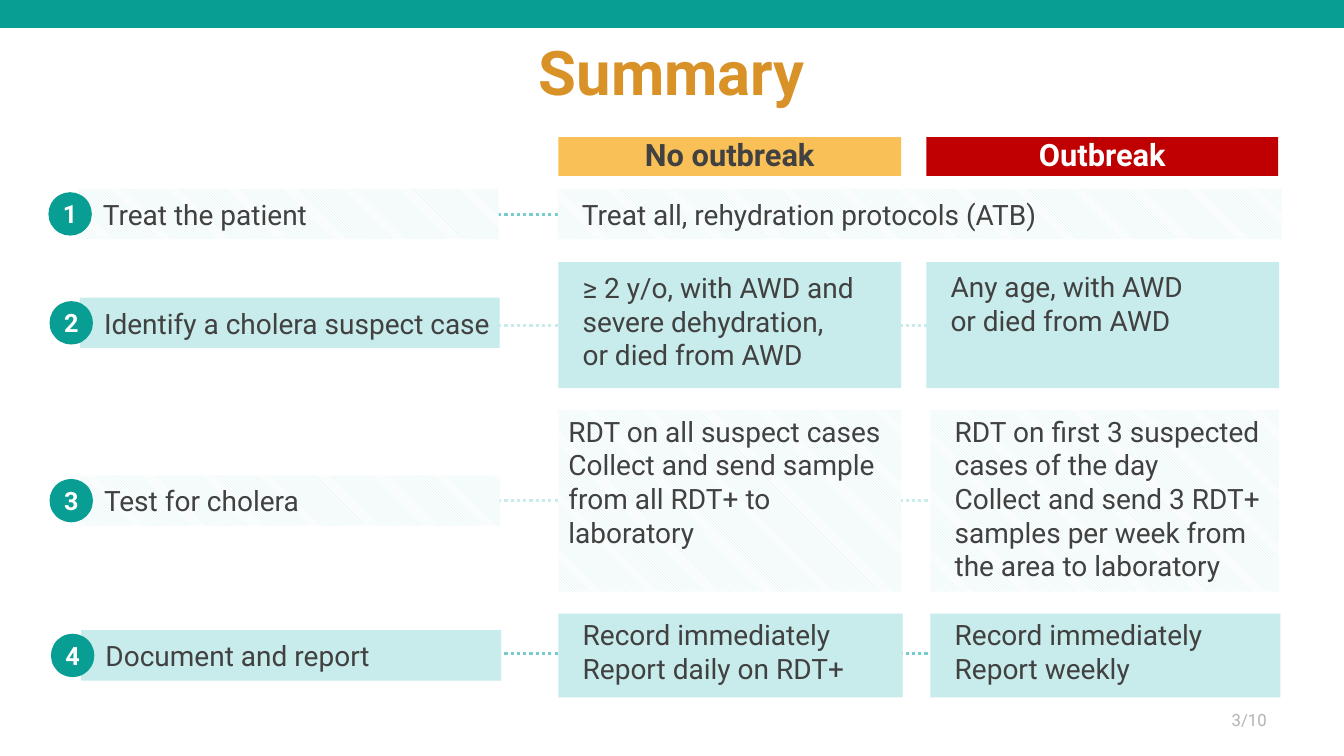
from pptx import Presentation
from pptx.util import Pt
from pptx.dml.color import RGBColor
from pptx.enum.dml import MSO_LINE as Dash, MSO_PATTERN as Pattern
from pptx.enum.shapes import MSO_SHAPE as Shape, MSO_CONNECTOR as Link
from pptx.enum.text import PP_ALIGN as Align, MSO_ANCHOR as Anchor
from lxml import etree

HEX = {"teal": "099E93", "mint": "C8EBEB", "aqua": "76CCCE", "gold": "D99228",
       "amber": "F8C056", "red": "C00000", "ink": "414141", "white": "FFFFFF",
       "gray": "B3B3B3"}
RGB = {name: RGBColor.from_string(code) for name, code in HEX.items()}
NS = "http://schemas.openxmlformats.org/drawingml/2006/main"

deck = Presentation()
deck.slide_width, deck.slide_height = Pt(960), Pt(540)
slide = deck.slides.add_slide(deck.slide_layouts[6])
shapes = slide.shapes


def block(kind, at, fill):
    """Add a shape with no outline; "hatch" gives the diagonal pattern."""
    shape = shapes.add_shape(kind, *[Pt(n) for n in at])
    shape.shadow.inherit = False
    shape.line.fill.background()
    if fill == "hatch":
        shape.fill.patterned()
        shape.fill.pattern = Pattern.LIGHT_DOWNWARD_DIAGONAL
        shape.fill.fore_color.rgb = RGB["mint"]
        shape.fill.back_color.rgb = RGB["white"]
    else:
        shape.fill.solid()
        shape.fill.fore_color.rgb = RGB[fill]
    return shape


def write(shape, paras, size, color, inset, bold=False, align=Align.LEFT,
          anchor=Anchor.MIDDLE, gap=1.0):
    """Fill a shape with paragraphs; a newline inside one is a line break."""
    frame = shape.text_frame
    frame.word_wrap = True
    frame.vertical_anchor = anchor
    (frame.margin_left, frame.margin_top,
     frame.margin_right, frame.margin_bottom) = [Pt(n) for n in inset]
    for i, text in enumerate(paras):
        para = frame.add_paragraph() if i else frame.paragraphs[0]
        para.alignment = align
        para.line_spacing = gap
        for j, line in enumerate(text.split("\n")):
            if j:
                para.add_line_break()
            run = para.add_run()
            run.text = line
            run.font.name = "Roboto"
            run.font.size = Pt(size)
            run.font.bold = bold
            run.font.color.rgb = RGB[color]


# Top band, title and page number
EDGE = (7.2, 3.6, 7.2, 3.6)
block(Shape.RECTANGLE, (-6, -6.5, 972, 26.5), "teal")
title = shapes.add_textbox(Pt(0.5), Pt(22.3), Pt(959), Pt(63.4))
write(title, ["Summary"], 44, "gold", EDGE, True, Align.CENTER, gap=0.9)
page = shapes.add_textbox(Pt(696), Pt(500.4), Pt(216), Pt(28.8))
write(page, ["3/10"], 12, "gray", EDGE, align=Align.RIGHT, gap=0.9)

# Column heads
for text, left, width, fill, color in [
        ("No outbreak", 398.9, 244.8, "amber", "ink"),
        ("Outbreak", 661.7, 251.3, "red", "white")]:
    head = block(Shape.RECTANGLE, (left, 98, width, 27.7), fill)
    write(head, [text], 22, color, EDGE, True, Align.CENTER, gap=0.9)

# Rows: label, label left and top, fill, line colour, line y and end,
# box top and height, boxes as (left, width, inset, anchor, paragraphs)
WIDE = (17.3, 2.9, 5.8, 8.6)
HIGH = (17.3, 2.9, 5.8, 34.4)
SLIM = (7.2, 2.9, 7.2, 3.6)
FLAT = (17.3, 0, 5.8, 0)
MID, TOP = Anchor.MIDDLE, Anchor.TOP
rows = [
    ("Treat the patient", 56.2, 134.8, "hatch", "aqua", 153.2, 520.5, 134.8, 36, [
        (398.4, 517.3, FLAT, MID, ["Treat all, rehydration protocols (ATB)"])]),
    ("Identify a cholera suspect case", 57, 212.6, "mint", "mint", 232.4, 703.4,
     187.2, 90, [
        (398.9, 244.8, WIDE, MID,
         ["≥ 2 y/o, with AWD and severe dehydration,\nor died from AWD"]),
        (661.7, 252, HIGH, MID, ["Any age, with AWD\nor died from AWD"])]),
    ("Test for cholera", 57, 339.6, "hatch", "mint", 357.6, 710.6, 293, 129.6, [
        (398.9, 244.8, SLIM, TOP,
         ["RDT on all suspect cases",
          "Collect and send sample from all RDT+ to laboratory"]),
        (664.6, 249, WIDE, TOP,
         ["RDT on first 3 suspected cases of the day",
          "Collect and send 3\u00a0RDT+ samples per week from the area to laboratory"])]),
    ("Document and report", 58, 450.2, "mint", "aqua", 466.6, 687, 438.3, 59.8, [
        (398.9, 245.9, WIDE, MID, ["Record immediately", "Report daily on RDT+"]),
        (664.6, 250, WIDE, MID, ["Record immediately", "Report weekly"])]),
]
for num, row in enumerate(rows, 1):
    label, left, top, fill, tint, mid, end, roof, tall, boxes = row

    # Dotted line behind the row
    line = shapes.add_connector(Link.STRAIGHT, Pt(320), Pt(mid), Pt(end), Pt(mid))
    line.line.color.rgb = RGB[tint]
    line.line.width = Pt(2.25)
    line.line.dash_style = Dash.ROUND_DOT
    etree.SubElement(line._element.spPr, f"{{{NS}}}effectLst")

    # Answer boxes
    for x, wide, inset, anchor, paras in boxes:
        box = block(Shape.RECTANGLE, (x, roof, wide, tall), fill)
        write(box, paras, 20, "ink", inset, anchor=anchor)

    # Step label and number
    bar = block(Shape.RECTANGLE, (left, top, 300, 36), fill)
    write(bar, [label], 20, "ink", FLAT)
    dot = block(Shape.OVAL, (left - 21.6, top + 2.5, 31, 31), "teal")
    write(dot, [str(num)], 18, "white", (0, 0, 0, 0), True, Align.CENTER)

deck.save("out.pptx")
